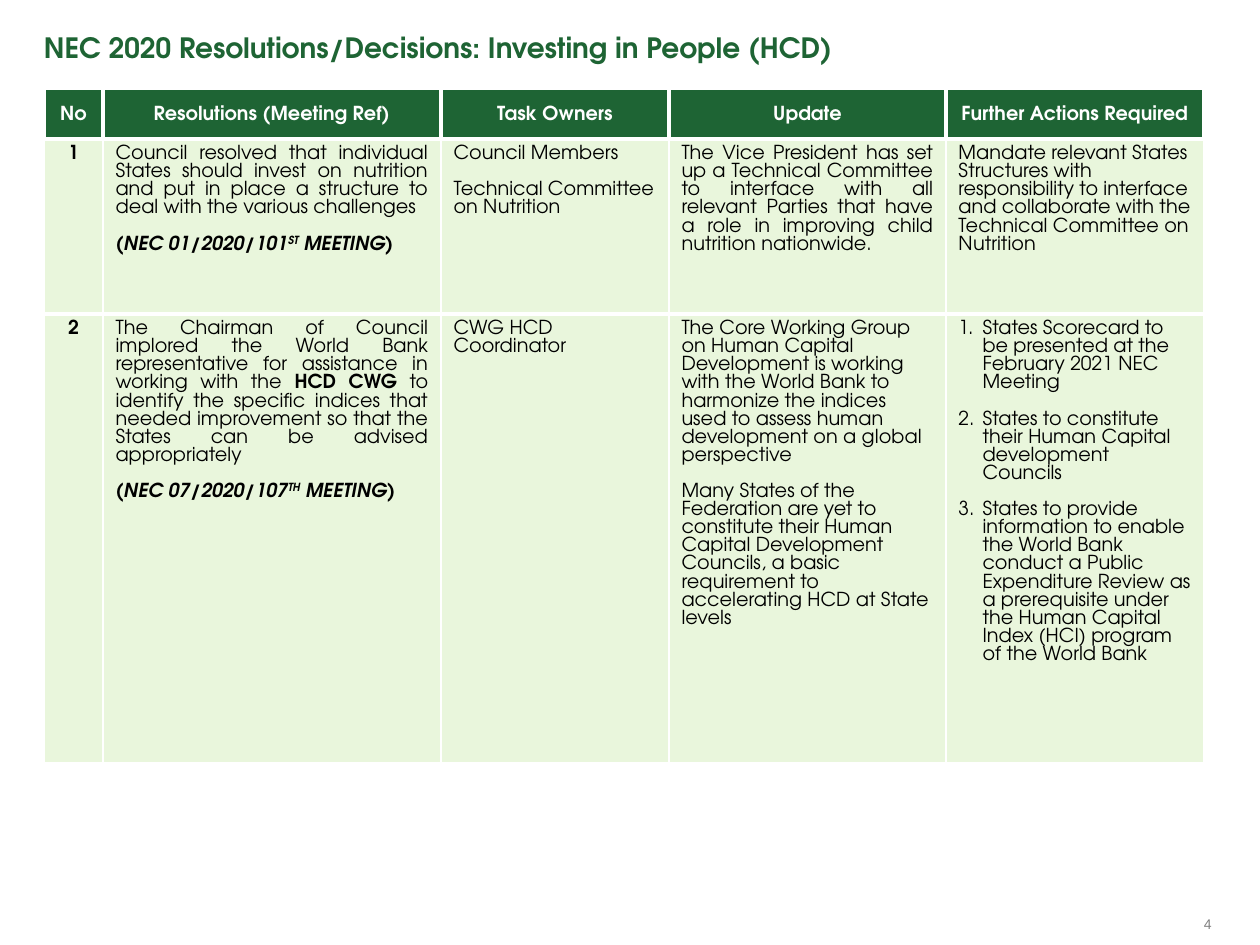
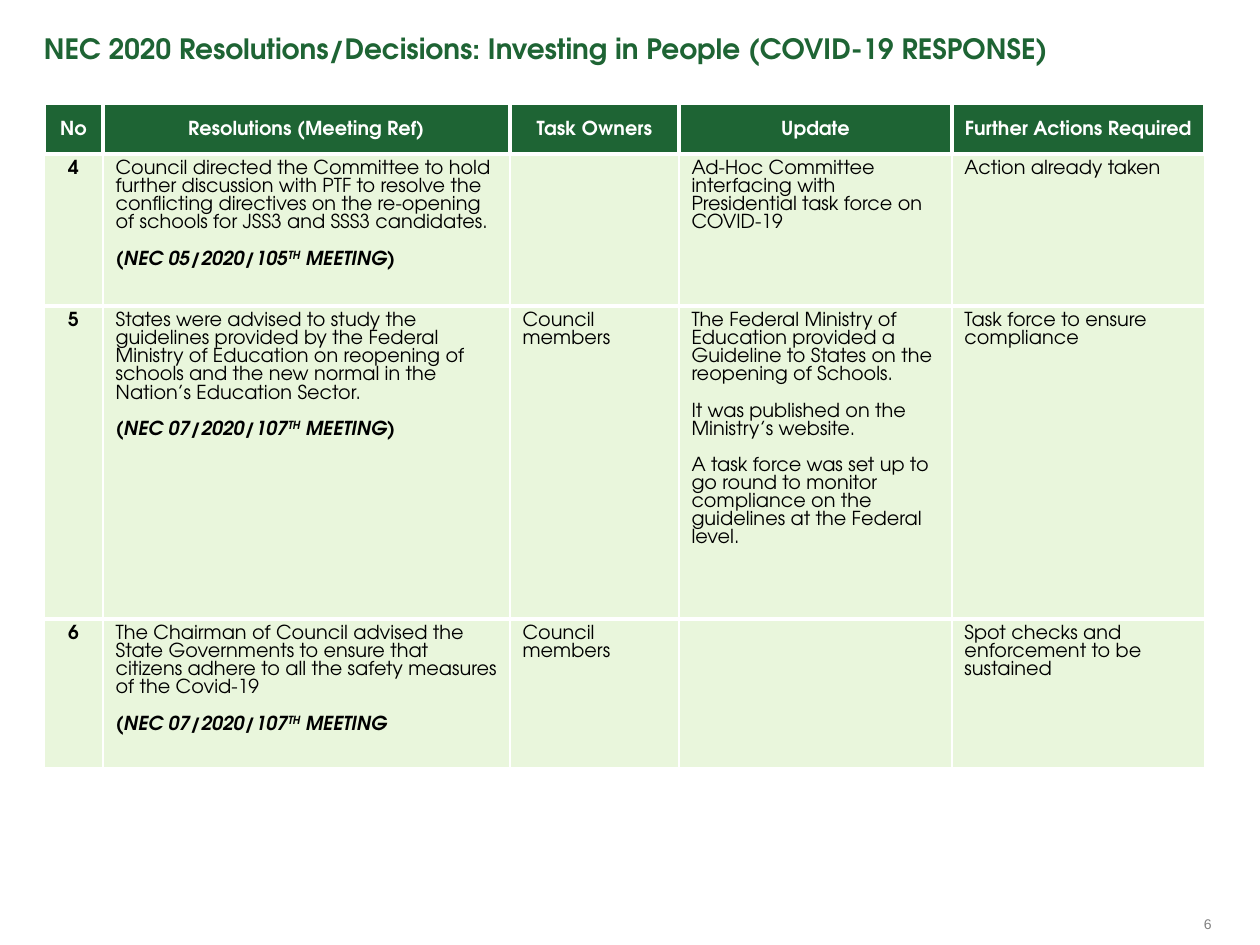
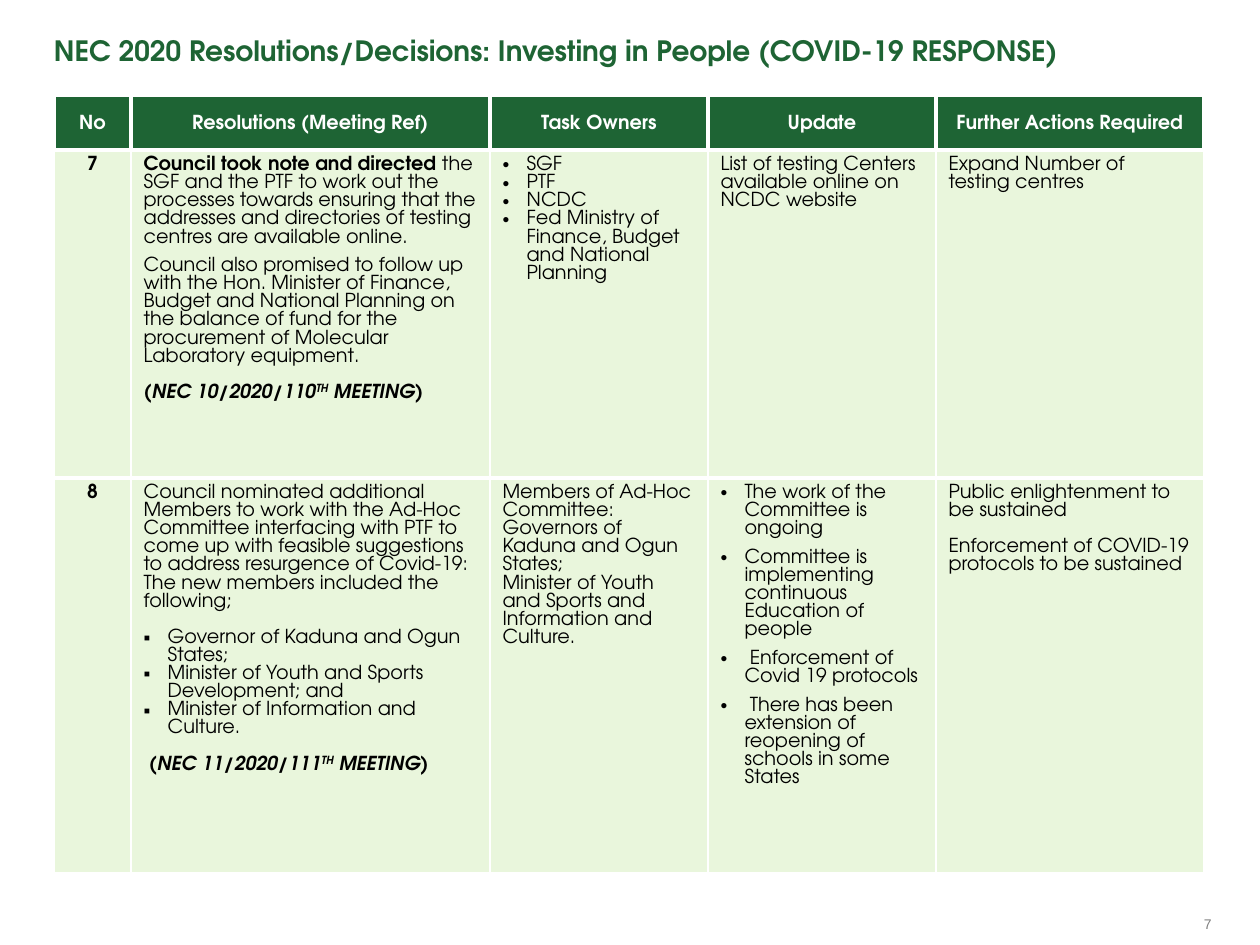
"""Builds three slides of council resolutions, each a title, a table and a page number."""
from lxml import etree
from pptx import Presentation
from pptx.dml.color import RGBColor
from pptx.enum.text import MSO_ANCHOR, PP_ALIGN
from pptx.oxml.ns import qn
from pptx.util import Pt

LEFT, CENTER, JUSTIFY = PP_ALIGN.LEFT, PP_ALIGN.CENTER, PP_ALIGN.JUSTIFY
TOP, MIDDLE = MSO_ANCHOR.TOP, MSO_ANCHOR.MIDDLE

GREEN = RGBColor(0x1E, 0x64, 0x34)
PALE_GREEN = RGBColor(0xE9, 0xF6, 0xDC)
WHITE = RGBColor(0xFF, 0xFF, 0xFF)
BLACK = RGBColor(0x00, 0x00, 0x00)
GRAY = RGBColor(0x80, 0x80, 0x80)

MAIN_FONT = "TeX Gyre Adventor"
SMALL_FONT = "Arial"
PX = 914400 // 126
BODY_LINE = 10.35
HEADER_LINE = 12.5
TITLE_LINE = 19.5
LINE_GAP = 10.35
SMALL_GAP = 6
INDENT = 24

PLAIN = {}
BOLD = dict(bold=True)
REFERENCE = dict(bold=True, italic=True)
ORDINAL = dict(bold=True, italic=True, raised=True)

HEADERS = ["No", "Resolutions (Meeting Ref)", "Task Owners", "Update", "Further Actions Required"]
COVID_TITLE = "NEC 2020 Resolutions/Decisions: Investing in People (COVID-19 RESPONSE)"

SLIDES = [
    dict(
        title="NEC 2020 Resolutions/Decisions: Investing in People (HCD)",
        number="4",
        title_at=(44, 30),
        table_at=(44, 88),
        columns=[59, 338, 228, 277, 258],
        heights=[51, 175, 450],
        justified={(1, 1), (2, 1), (1, 3)},
        rows=[
            [
                ["1"],
                ["Council resolved that individual States should invest on nutrition and put in "
                 "place a structure to deal with the various challenges",
                 dict(meeting=("(NEC 01/2020/101", "ST", " MEETING)"))],
                ["Council Members",
                 dict(text="Technical Committee on Nutrition", gap=LINE_GAP)],
                ["The Vice President has set up a Technical Committee to interface with all "
                 "relevant Parties that have a role in improving child nutrition nationwide."],
                ["Mandate relevant States Structures with responsibility to interface and "
                 "collaborate with the Technical Committee on Nutrition"],
            ],
            [
                ["2"],
                [dict(spans=[
                    ("The Chairman of Council implored the World Bank representative for "
                     "assistance in working with the", PLAIN),
                    (" HCD CWG", BOLD),
                    (" to identify the specific indices that needed improvement so that the "
                     "States can be advised appropriately", PLAIN)]),
                 dict(meeting=("(NEC 07/2020/107", "TH", " MEETING)"))],
                ["CWG HCD Coordinator"],
                ["The Core Working Group on Human Capital Development is working with the World "
                 "Bank to harmonize the indices used to assess human development on a global "
                 "perspective",
                 dict(text="Many States of the Federation are yet to constitute their Human "
                      "Capital Development Councils, a basic requirement to accelerating HCD at "
                      "State levels", gap=LINE_GAP)],
                [dict(text="States Scorecard to be presented at the February 2021 NEC Meeting",
                      bullet="1."),
                 dict(text="States to constitute their Human Capital development Councils",
                      bullet="1.", gap=LINE_GAP),
                 dict(text="States to provide information to enable the World Bank conduct a "
                      "Public Expenditure Review as a prerequisite under the Human Capital Index "
                      "(HCI) program of the World Bank", bullet="1.", gap=LINE_GAP)],
            ],
        ],
    ),
    dict(
        title=COVID_TITLE,
        number="6",
        title_at=(44, 31),
        table_at=(44, 103),
        columns=[59, 407, 169, 273, 253],
        heights=[51, 152, 313, 150],
        justified=set(),
        rows=[
            [
                ["4"],
                ["Council directed the Committee to hold further discussion with PTF to resolve "
                 "the conflicting directives on the re-opening of schools for JSS3 and SSS3 "
                 "candidates.",
                 dict(meeting=("(NEC 05/2020/105", "TH", " MEETING)"))],
                [],
                ["Ad-Hoc Committee interfacing with Presidential task force on COVID-19"],
                ["Action already taken"],
            ],
            [
                ["5"],
                ["States were advised to study the guidelines provided by the Federal Ministry "
                 "of Education on reopening of schools and the new normal in the Nation’s "
                 "Education Sector.",
                 dict(meeting=("(NEC 07/2020/107", "TH", " MEETING)"))],
                ["Council members"],
                ["The Federal Ministry of Education provided a Guideline to States on the "
                 "reopening of Schools.",
                 dict(text="It was published on the Ministry’s website.", gap=LINE_GAP),
                 dict(text="A task force was set up to go round to monitor compliance on the "
                      "guidelines at the Federal level.", gap=LINE_GAP)],
                ["Task force to ensure compliance"],
            ],
            [
                ["6"],
                ["The Chairman of Council advised the State Governments to ensure that citizens "
                 "adhere to all the safety measures of the Covid-19",
                 dict(meeting=("(NEC 07/2020/107", "TH", " MEETING"))],
                ["Council members"],
                [],
                ["Spot checks and enforcement to be sustained"],
            ],
        ],
    ),
    dict(
        title=COVID_TITLE,
        number="7",
        title_at=(54, 33),
        table_at=(54, 95),
        columns=[77, 359, 218, 228, 268],
        heights=[55, 328, 396],
        justified=set(),
        rows=[
            [
                ["7"],
                [dict(spans=[
                    ("Council took note and directed", BOLD),
                    (" the SGF and the PTF to work out the processes towards ensuring that the "
                     "addresses and directories of testing centres are available online.",
                     PLAIN)]),
                 dict(text="Council also promised to follow up with the Hon. Minister of Finance, "
                      "Budget and National Planning on the balance of fund for the procurement "
                      "of Molecular Laboratory equipment.", gap=SMALL_GAP),
                 dict(meeting=("(NEC 10/2020/110", "TH", " MEETING)"))],
                [dict(text="SGF", bullet="•"),
                 dict(text="PTF", bullet="•"),
                 dict(text="NCDC", bullet="•"),
                 dict(text="Fed Ministry of Finance, Budget and National Planning", bullet="•")],
                ["List of testing Centers available online on NCDC website"],
                ["Expand Number of testing centres"],
            ],
            [
                ["8"],
                ["Council nominated additional Members to work with the Ad-Hoc Committee "
                 "interfacing with PTF to come up with feasible suggestions to address "
                 "resurgence of Covid-19: The new members included the following;",
                 dict(text="Governor of Kaduna and Ogun States;", bullet="▪", gap=LINE_GAP),
                 dict(text="Minister of Youth and Sports Development; and", bullet="▪"),
                 dict(text="Minister of Information and Culture.", bullet="▪"),
                 dict(meeting=(" (NEC 11/2020/111", "TH", " MEETING)"))],
                ["Members of Ad-Hoc Committee:",
                 "Governors of Kaduna and Ogun States;",
                 "Minister of Youth and Sports and Information and Culture."],
                [dict(text="The work of the Committee is ongoing", bullet="•"),
                 dict(text="Committee is implementing continuous Education of people",
                      bullet="•", gap=SMALL_GAP),
                 dict(text=" Enforcement of Covid 19 protocols", bullet="•", gap=SMALL_GAP),
                 dict(text=" There has been extension of reopening of schools in some States",
                      bullet="•", gap=SMALL_GAP)],
                ["Public enlightenment to be sustained",
                 dict(text="Enforcement of COVID-19 protocols to be sustained", gap=LINE_GAP)],
            ],
        ],
    ),
]


def add_bullet(para, bullet):
    properties = para._p.get_or_add_pPr()
    properties.set("marL", str(INDENT * PX))
    properties.set("indent", str(-INDENT * PX))
    if bullet == "1.":
        etree.SubElement(properties, qn("a:buAutoNum"), type="arabicPeriod")
    else:
        etree.SubElement(properties, qn("a:buFont"), typeface=SMALL_FONT)
        etree.SubElement(properties, qn("a:buChar"), char=bullet)


def paragraph_spans(item, bold):
    if "meeting" in item:
        return list(zip(item["meeting"], (REFERENCE, ORDINAL, REFERENCE)))
    return item.get("spans") or [(item["text"], dict(bold=bold))]


def write_text(frame, items, size=11, color=BLACK, font=MAIN_FONT, bold=False,
               align=LEFT, line=None):
    for index, item in enumerate(items):
        if isinstance(item, str):
            item = dict(text=item)
        para = frame.paragraphs[0] if index == 0 else frame.add_paragraph()
        if "bullet" in item:
            add_bullet(para, item["bullet"])
        para.alignment = align
        if line:
            para.line_spacing = Pt(line)
        if index:
            para.space_before = Pt(item.get("gap", LINE_GAP if "meeting" in item else 0))
        for text, style in paragraph_spans(item, bold):
            span = para.add_run()
            span.text = text
            span.font.name = font
            span.font.size = Pt(size)
            span.font.color.rgb = color
            span.font.bold = style.get("bold", False)
            span.font.italic = style.get("italic", False)
            if style.get("raised"):
                span._r.get_or_add_rPr().set("baseline", "30000")


def add_text_box(page, text, left, top, width, height, wrap=True, anchor=TOP, **text_format):
    box = page.shapes.add_textbox(left * PX, top * PX, width * PX, height * PX)
    frame = box.text_frame
    frame.margin_left = frame.margin_right = frame.margin_top = frame.margin_bottom = 0
    frame.word_wrap = wrap
    frame.vertical_anchor = anchor
    write_text(frame, [text], **text_format)


def style_cell(cell, fill, side_width):
    properties = cell._tc.get_or_add_tcPr()
    for side, width in (("L", side_width), ("R", side_width), ("T", 2.25), ("B", 2.25)):
        border = etree.SubElement(properties, qn(f"a:ln{side}"), w=str(Pt(width)))
        solid = etree.SubElement(border, qn("a:solidFill"))
        etree.SubElement(solid, qn("a:srgbClr"), val=str(WHITE))
    cell.fill.solid()
    cell.fill.fore_color.rgb = fill


def add_resolutions(page, content):
    left, top = content["table_at"]
    columns, heights = content["columns"], content["heights"]
    table = page.shapes.add_table(len(heights), len(columns), left * PX, top * PX,
                                  sum(columns) * PX, sum(heights) * PX).table
    for column, width in zip(table.columns, columns):
        column.width = width * PX
    for row, height in zip(table.rows, heights):
        row.height = height * PX
    for column, header in enumerate(HEADERS):
        cell = table.cell(0, column)
        style_cell(cell, GREEN, 2.25)
        cell.vertical_anchor = MIDDLE
        write_text(cell.text_frame, [header], color=WHITE, bold=True, align=CENTER,
                   line=HEADER_LINE)
    for row, entries in enumerate(content["rows"], start=1):
        for column, items in enumerate(entries):
            cell = table.cell(row, column)
            style_cell(cell, PALE_GREEN, 1)
            is_number = column == 0
            is_justified = (row, column) in content["justified"]
            align = CENTER if is_number else JUSTIFY if is_justified else LEFT
            write_text(cell.text_frame, items, bold=is_number, align=align, line=BODY_LINE)


def main():
    deck = Presentation()
    deck.slide_width, deck.slide_height = 1260 * PX, 945 * PX
    for content in SLIDES:
        page = deck.slides.add_slide(deck.slide_layouts[6])
        add_text_box(page, content["number"], 1204, 915, 18, 18, wrap=False, anchor=MIDDLE,
                     size=8, color=GRAY, font=SMALL_FONT)
        add_resolutions(page, content)
        add_text_box(page, content["title"], *content["title_at"], 1160, 34,
                     size=16, color=GREEN, bold=True, line=TITLE_LINE)
    deck.save("out.pptx")


if __name__ == "__main__":
    main()
